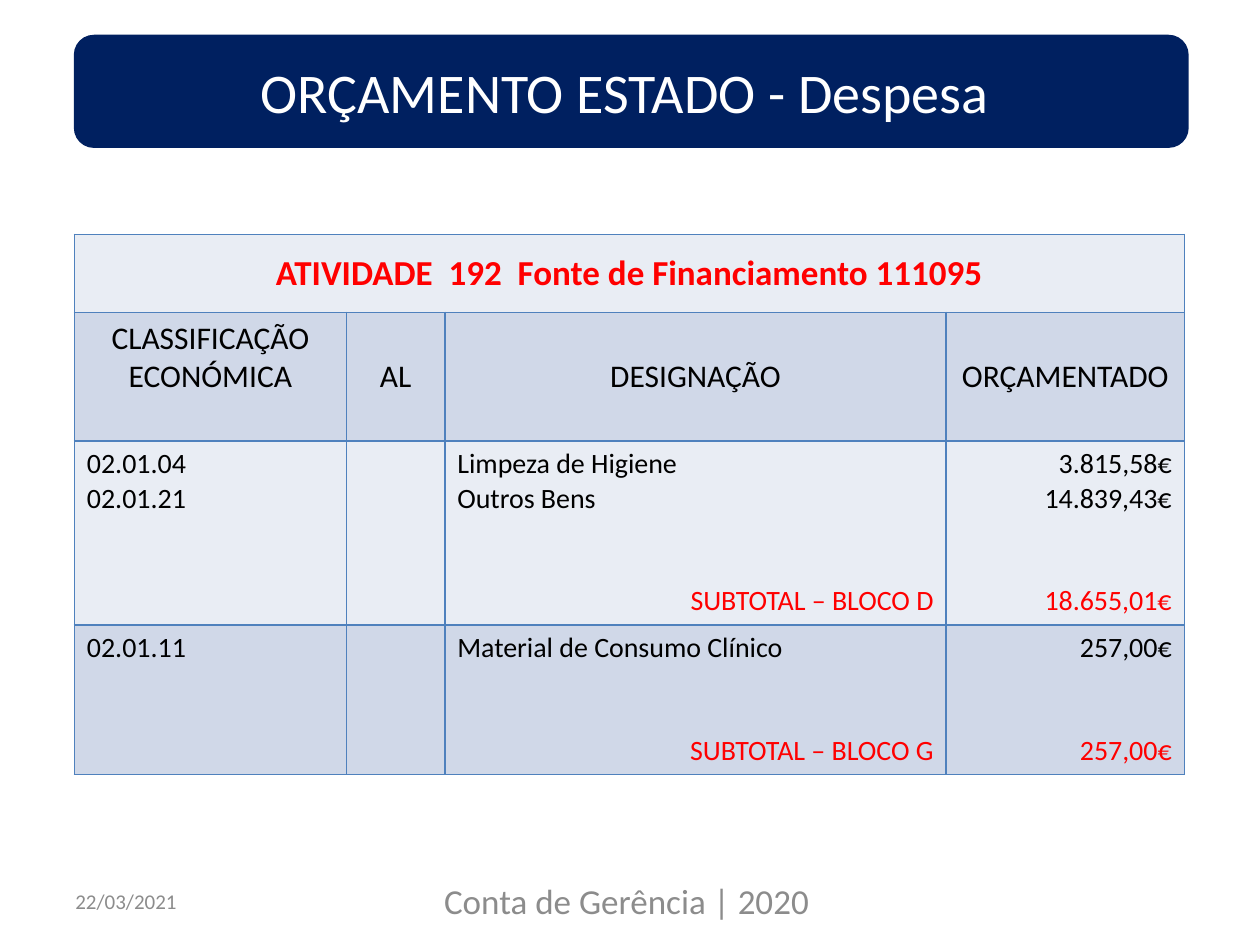
from dataclasses import dataclass

from lxml import etree
from pptx import Presentation
from pptx.dml.color import RGBColor
from pptx.enum.shapes import MSO_SHAPE
from pptx.enum.text import MSO_ANCHOR, PP_ALIGN
from pptx.oxml.ns import qn
from pptx.util import Inches, Pt

LEFT, CENTER, RIGHT = PP_ALIGN.LEFT, PP_ALIGN.CENTER, PP_ALIGN.RIGHT
TOP, MIDDLE = MSO_ANCHOR.TOP, MSO_ANCHOR.MIDDLE
ROUNDED = MSO_SHAPE.ROUNDED_RECTANGLE
TITLE_ONLY_LAYOUT = 5

FONT = "Calibri"
NAVY, WHITE, BLACK, RED, GREY = "002060", "FFFFFF", "000000", "FF0000", "8C8C8C"
LIGHT_BAND, DARK_BAND, BORDER = "E9EDF4", "D0D8E8", "4F81BD"
SUBTOTAL_GAP = 39
BANNER = (0.6, 0.29, 8.82, 0.87)
COLUMN_WIDTHS = (2.16, 0.78, 3.98, 1.89)
ROW_HEIGHTS = (0.62, 1.02, 1.46, 1.19)


@dataclass(frozen=True)
class Line:
    text: str
    size: float = 16
    color: str = BLACK
    align: PP_ALIGN = LEFT
    bold: bool = False
    space_before: float = 0


@dataclass(frozen=True)
class Block:
    """A group of expenses: (code, designation, amount) items and their subtotal."""
    items: tuple[tuple[str, str, str], ...]
    subtotal_label: str
    subtotal: str


BLOCKS = (
    Block((("02.01.04", "Limpeza de Higiene", "3.815,58€"),
           ("02.01.21", "Outros Bens", "14.839,43€")),
          "SUBTOTAL – BLOCO D", "18.655,01€"),
    Block((("02.01.11", "Material de Consumo Clínico", "257,00€"),),
          "SUBTOTAL – BLOCO G", "257,00€"),
)
HEADINGS = (("CLASSIFICAÇÃO", "ECONÓMICA"), ("AL",), ("DESIGNAÇÃO",), ("ORÇAMENTADO",))


def rgb(color: str) -> RGBColor:
    return RGBColor.from_string(color)


def inches(lengths: tuple[float, ...]) -> list[int]:
    return [Inches(length) for length in lengths]


def write(frame, lines: list[Line]) -> None:
    for index, line in enumerate(lines):
        paragraph = frame.paragraphs[0] if index == 0 else frame.add_paragraph()
        paragraph.alignment = line.align
        paragraph.space_before = Pt(line.space_before)
        run = paragraph.add_run()
        run.text = line.text
        run.font.name = FONT
        run.font.size = Pt(line.size)
        run.font.bold = line.bold
        run.font.color.rgb = rgb(line.color)


def add_label(slide, box: tuple[float, ...], line: Line) -> None:
    frame = slide.shapes.add_textbox(*inches(box)).text_frame
    frame.word_wrap = True
    frame.vertical_anchor = MIDDLE
    write(frame, [line])


def add_banner(slide, line: Line) -> None:
    banner = slide.shapes.add_shape(ROUNDED, *inches(BANNER))
    banner.shadow.inherit = False
    banner.fill.solid()
    banner.fill.fore_color.rgb = rgb(NAVY)
    banner.line.color.rgb = rgb(NAVY)
    banner.line.width = Pt(2)

    title = slide.shapes.title
    title.left, title.top, title.width, title.height = inches(BANNER)
    title.text_frame.vertical_anchor = MIDDLE
    write(title.text_frame, [line])
    # Bring the title in front of its banner
    slide.shapes._spTree.append(title._element)


def add_borders(cell) -> None:
    properties = cell._tc.get_or_add_tcPr()
    for index, side in enumerate(("lnL", "lnR", "lnT", "lnB")):
        edge = etree.Element(qn(f"a:{side}"), w=str(Pt(1)))
        fill = etree.SubElement(edge, qn("a:solidFill"))
        etree.SubElement(fill, qn("a:srgbClr"), val=BORDER)
        properties.insert(index, edge)


def block_cells(block: Block) -> list[list[Line]]:
    codes, designations, amounts = zip(*block.items)
    label, total = (
        Line(text, color=RED, align=RIGHT, space_before=SUBTOTAL_GAP)
        for text in (block.subtotal_label, block.subtotal)
    )
    return [
        [Line(code) for code in codes],
        [],
        [Line(name) for name in designations] + [label],
        [Line(amount, align=RIGHT) for amount in amounts] + [total],
    ]


def add_budget_table(slide) -> None:
    activity = Line("ATIVIDADE  192  Fonte de Financiamento 111095", 20, RED, CENTER, True)
    rows = [
        [[activity], [], [], []],
        [[Line(text, 18, align=CENTER) for text in heading] for heading in HEADINGS],
        *(block_cells(block) for block in BLOCKS),
    ]
    box = (0.59, 1.86, sum(COLUMN_WIDTHS), sum(ROW_HEIGHTS))
    table = slide.shapes.add_table(len(rows), len(COLUMN_WIDTHS), *inches(box)).table
    table.first_row = table.horz_banding = False
    for column, width in zip(table.columns, COLUMN_WIDTHS):
        column.width = Inches(width)

    for row_index, (cells, height) in enumerate(zip(rows, ROW_HEIGHTS)):
        table.rows[row_index].height = Inches(height)
        for column_index, lines in enumerate(cells):
            cell = table.cell(row_index, column_index)
            cell.fill.solid()
            cell.fill.fore_color.rgb = rgb(DARK_BAND if row_index % 2 else LIGHT_BAND)
            cell.vertical_anchor = MIDDLE if row_index < 2 else TOP
            add_borders(cell)
            write(cell.text_frame, lines)

    table.cell(0, 0).merge(table.cell(0, len(COLUMN_WIDTHS) - 1))
    # The two-line heading sits half a line above the others
    table.cell(1, 0).margin_bottom = Inches(0.35)


def main() -> None:
    presentation = Presentation()
    presentation.slide_width, presentation.slide_height = Inches(10), Inches(7.5)
    slide = presentation.slides.add_slide(presentation.slide_layouts[TITLE_ONLY_LAYOUT])
    add_label(slide, (0.5, 6.95, 2.33, 0.4), Line("22/03/2021", 12, GREY))
    add_label(slide, (3.42, 6.95, 3.17, 0.4),
              Line("Conta de Gerência | 2020 ", 20, GREY, CENTER))
    add_budget_table(slide)
    add_banner(slide, Line("ORÇAMENTO ESTADO - Despesa ", 32, WHITE, CENTER))
    presentation.save("out.pptx")


if __name__ == "__main__":
    main()
